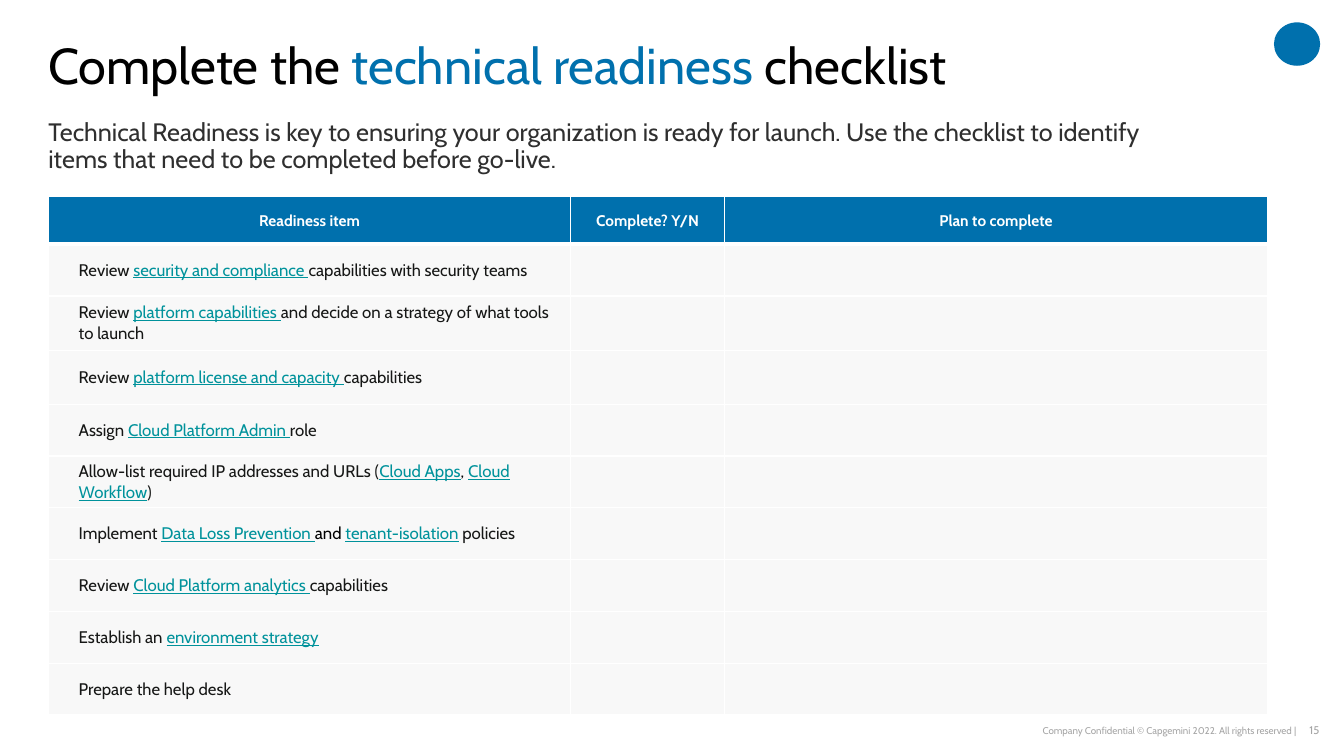
from dataclasses import dataclass

from lxml.etree import SubElement
from pptx import Presentation
from pptx.dml.color import RGBColor
from pptx.enum.shapes import MSO_SHAPE
from pptx.enum.text import MSO_ANCHOR as Anchor, PP_ALIGN as Align
from pptx.oxml import parse_xml
from pptx.oxml.ns import nsdecls, qn
from pptx.slide import Slide
from pptx.table import _Cell as Cell
from pptx.text.text import _Paragraph as Paragraph
from pptx.util import Pt

FONT = "Cabin"
BLACK = RGBColor(0x00, 0x00, 0x00)
WHITE = RGBColor(0xFF, 0xFF, 0xFF)
BLUE = RGBColor(0x00, 0x70, 0xAD)
TEAL = RGBColor(0x00, 0x92, 0x9B)
INK = RGBColor(0x16, 0x17, 0x16)
CHARCOAL = RGBColor(0x2F, 0x2F, 0x2F)
FOOTER_GREY = RGBColor(0xA6, 0xA6, 0xA6)
ROW_GREY = RGBColor(0xF2, 0xF2, 0xF2)

LEFT = 34.6


@dataclass(frozen=True)
class Span:
    text: str
    color: RGBColor = INK
    underline: bool = False


@dataclass(frozen=True)
class TextBlock:
    left: float
    top: float
    width: float
    height: float
    size: float
    spans: tuple[Span, ...]
    align: Align = Align.LEFT
    anchor: Anchor = Anchor.TOP
    line_spacing: float = 1.0
    margin_y: float = 0


def linked(text: str) -> Span:
    return Span(text, TEAL, underline=True)


TEXT_BLOCKS = (
    TextBlock(924.5, 513.4, 18, 17.3, 8, (Span("15", FOOTER_GREY),),
              align=Align.RIGHT, margin_y=3.6),
    TextBlock(568.8, 513.4, 357.1, 17.3, 7,
              (Span("Company Confidential © Capgemini 2022. All rights reserved |", FOOTER_GREY),),
              align=Align.RIGHT, anchor=Anchor.MIDDLE),
    TextBlock(LEFT, 85.7, 817.9, 54.7, 18,
              (Span("Technical Readiness is key to ensuring your organization is ready for launch. "
                    "Use the checklist to identify items that need to be completed before go-live.",
                    CHARCOAL),),
              line_spacing=0.9),
    TextBlock(LEFT, 29.5, 900, 47.5, 36,
              (Span("Complete the ", BLACK), Span("technical readiness ", BLUE),
               Span("checklist", BLACK)),
              line_spacing=0.9),
)

COLUMNS = (("Readiness item", 373), ("Complete? Y/N", 110.2), ("Plan to complete", 387.4))
HEADER_HEIGHT = 33.8
ROW_HEIGHT = 37
TALL_ROW_HEIGHT = 38.7
TALL_ROWS = (2, 3)

READINESS_ITEMS = (
    (Span("Review "), linked("security and compliance "),
     Span("capabilities with security teams")),
    (Span("Review "), linked("platform capabilities "),
     Span("and decide on a strategy of what tools to launch")),
    (Span("Review "), linked("platform license and capacity "), Span("capabilities")),
    (Span("Assign "), linked("Cloud Platform Admin "), Span("role")),
    (Span("Allow-list required IP addresses and URLs ("), linked("Cloud Apps"),
     Span(", ", BLACK), linked("Cloud Workflow"), Span(")")),
    (Span("Implement "), linked("Data Loss Prevention "), Span("and ", BLACK),
     linked("tenant-isolation"), Span(" policies")),
    (Span("Review "), linked("Cloud Platform analytics "), Span("capabilities")),
    (Span("Establish an "), linked("environment strategy")),
    (Span("Prepare the help desk"),),
)


def write_spans(paragraph: Paragraph, spans: tuple[Span, ...], size: float,
                bold: bool = False) -> None:
    for span in spans:
        run = paragraph.add_run()
        run.text = span.text
        font = run.font
        font.name, font.size, font.bold = FONT, Pt(size), bold
        font.color.rgb = span.color
        font.underline = span.underline


def add_text_block(slide: Slide, block: TextBlock) -> None:
    box = slide.shapes.add_textbox(Pt(block.left), Pt(block.top), Pt(block.width), Pt(block.height))
    frame = box.text_frame
    frame.word_wrap = True
    frame.vertical_anchor = block.anchor
    frame.margin_left = frame.margin_right = 0
    frame.margin_top = frame.margin_bottom = Pt(block.margin_y)
    paragraph = frame.paragraphs[0]
    paragraph.alignment = block.align
    paragraph.line_spacing = block.line_spacing
    write_spans(paragraph, block.spans, block.size)


def add_emblem(slide: Slide) -> None:
    emblem = slide.shapes.add_shape(MSO_SHAPE.OVAL, Pt(910), Pt(16), Pt(33), Pt(31))
    emblem.shadow.inherit = False
    emblem.fill.solid()
    emblem.fill.fore_color.rgb = BLUE
    emblem.line.fill.background()


def set_borders(cell: Cell, bottom: float = 1) -> None:
    """Draw white borders, placed ahead of the fill as the schema asks."""
    properties = cell._tc.get_or_add_tcPr()
    for index, (side, width) in enumerate((("L", 1), ("R", 1), ("T", 1), ("B", bottom))):
        properties.insert(index, parse_xml(
            f'<a:ln{side} {nsdecls("a")} w="{Pt(width)}"><a:solidFill>'
            f'<a:srgbClr val="{WHITE}"/></a:solidFill></a:ln{side}>'))


def set_fill(cell: Cell, color: RGBColor, opacity: int = 100) -> None:
    cell.fill.solid()
    cell.fill.fore_color.rgb = color
    if opacity < 100:
        shade = cell._tc.tcPr.find(f"{qn('a:solidFill')}/{qn('a:srgbClr')}")
        SubElement(shade, qn("a:alpha")).set("val", str(opacity * 1000))


def set_margins(cell: Cell, left: float, top: float, right: float, bottom: float) -> None:
    cell.margin_left, cell.margin_top = Pt(left), Pt(top)
    cell.margin_right, cell.margin_bottom = Pt(right), Pt(bottom)


def add_checklist(slide: Slide) -> None:
    heights = [HEADER_HEIGHT] + [
        TALL_ROW_HEIGHT if row in TALL_ROWS else ROW_HEIGHT
        for row in range(1, len(READINESS_ITEMS) + 1)]
    width = sum(column_width for _, column_width in COLUMNS)
    checklist = slide.shapes.add_table(len(heights), len(COLUMNS), Pt(LEFT), Pt(140.6),
                                       Pt(width), Pt(sum(heights))).table
    checklist.horz_banding = False
    for row, height in zip(checklist.rows, heights):
        row.height = Pt(height)

    for index, (heading, column_width) in enumerate(COLUMNS):
        checklist.columns[index].width = Pt(column_width)
        cell = checklist.cell(0, index)
        set_fill(cell, BLUE)
        set_borders(cell, bottom=3)
        set_margins(cell, 7.2, 7.2, 7.2, 7.2)
        cell.vertical_anchor = Anchor.MIDDLE
        paragraph = cell.text_frame.paragraphs[0]
        paragraph.alignment = Align.CENTER
        write_spans(paragraph, (Span(heading, WHITE),), 11, bold=True)

    for row, item in enumerate(READINESS_ITEMS, start=1):
        for column in range(len(COLUMNS)):
            cell = checklist.cell(row, column)
            set_fill(cell, ROW_GREY, opacity=50)
            set_borders(cell)
        item_cell = checklist.cell(row, 0)
        set_margins(item_cell, 21.6, 0, 11.5, 0)
        item_cell.vertical_anchor = Anchor.MIDDLE
        write_spans(item_cell.text_frame.paragraphs[0], item, 12)


def main() -> None:
    deck = Presentation()
    deck.slide_width, deck.slide_height = Pt(960), Pt(540)
    slide = deck.slides.add_slide(deck.slide_layouts[6])
    add_emblem(slide)
    for block in TEXT_BLOCKS:
        add_text_block(slide, block)
    add_checklist(slide)
    deck.save("out.pptx")


if __name__ == "__main__":
    main()
